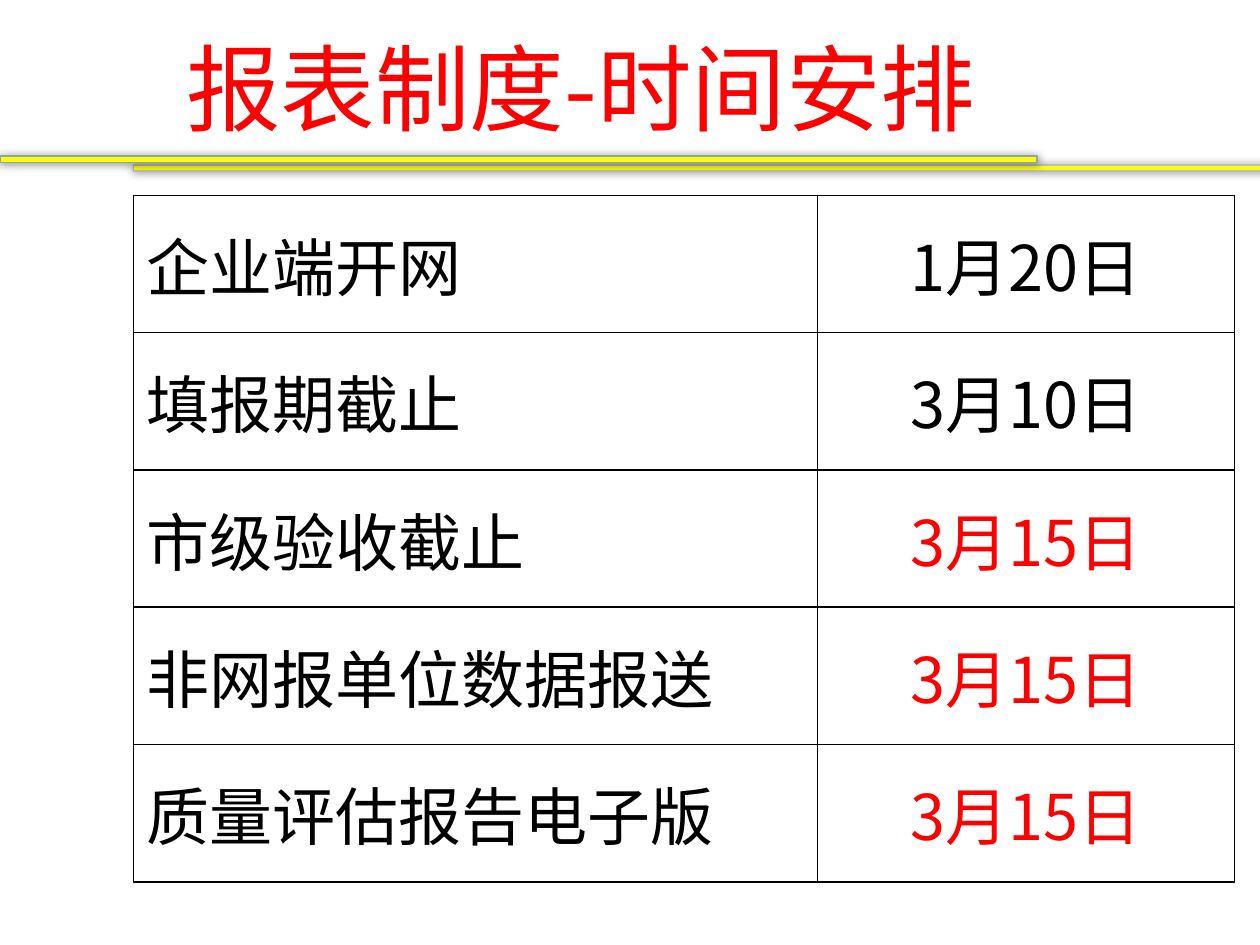
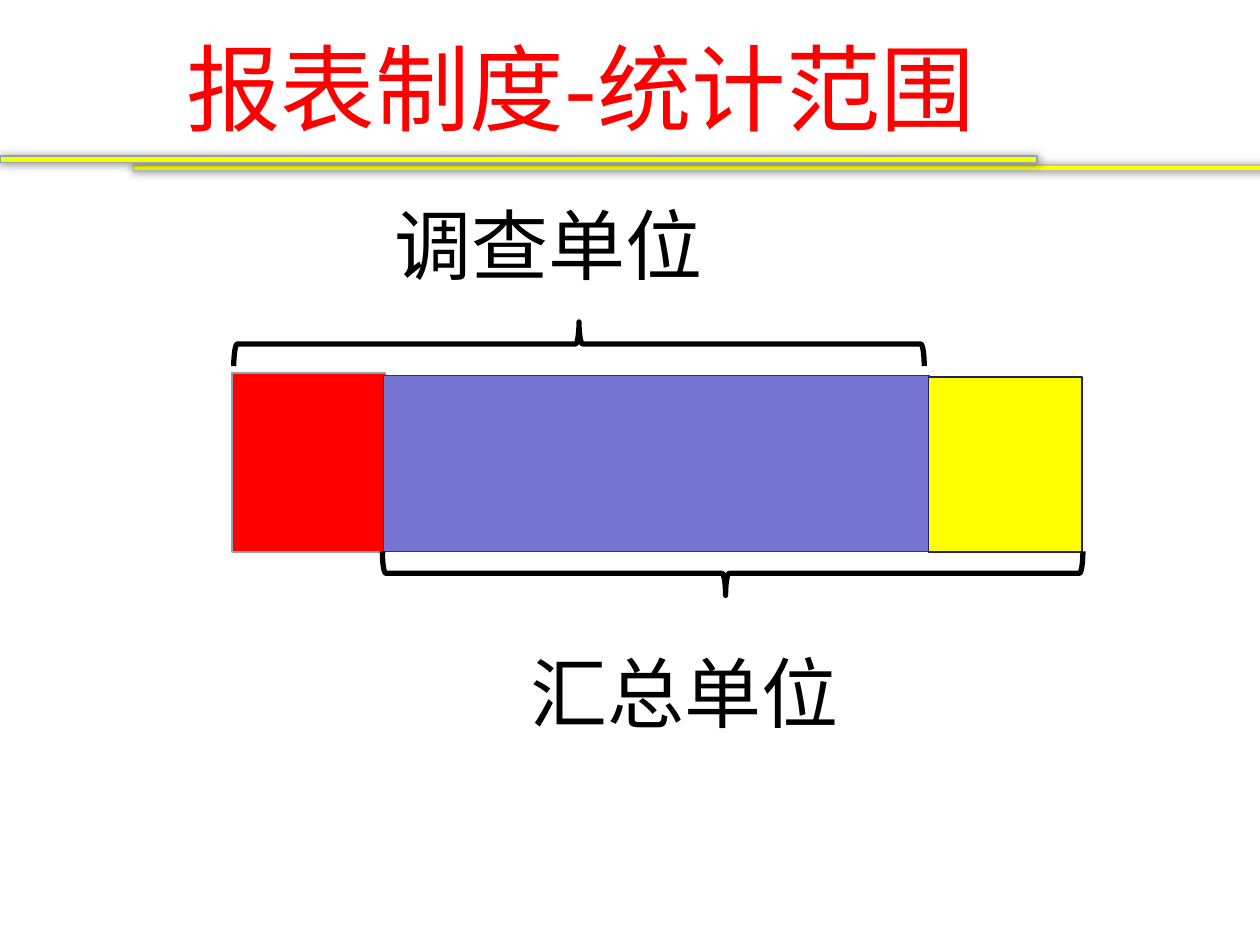
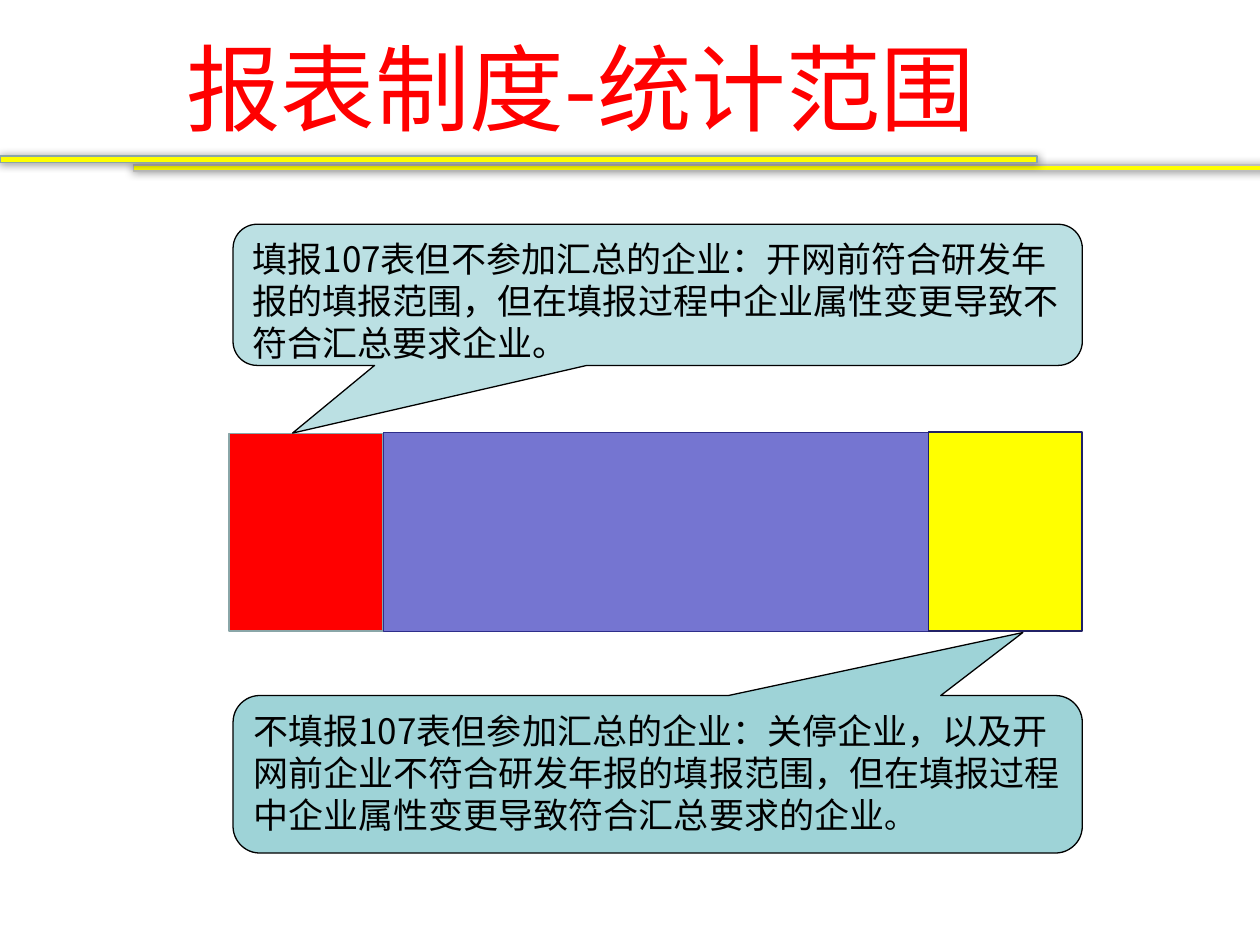
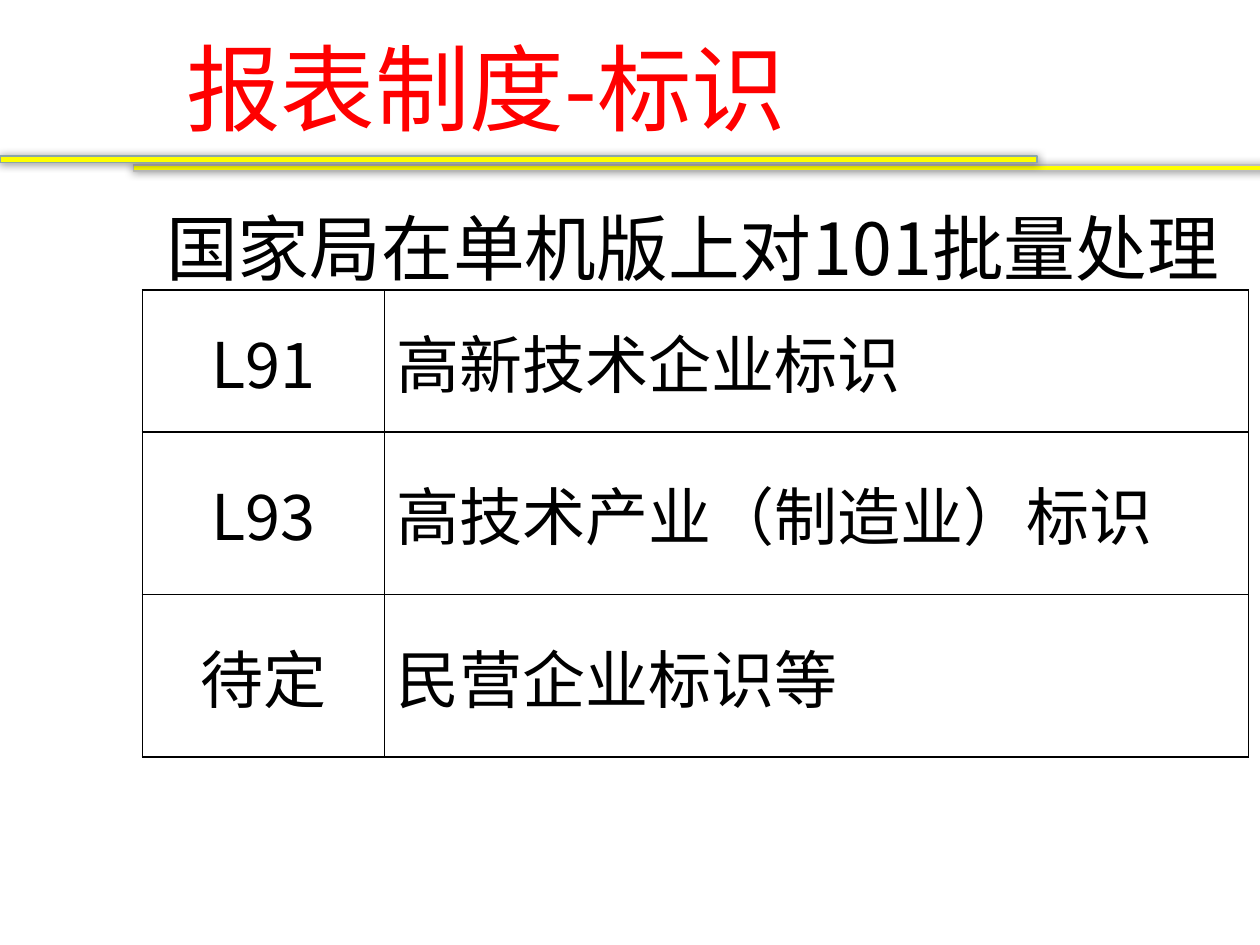
"""Build four slides on the reporting schedule, scope and labels."""
from dataclasses import dataclass
from lxml import etree
from pptx import Presentation
from pptx import util as u
from pptx.dml.color import RGBColor
from pptx.enum import shapes, text
from pptx.oxml import ns


@dataclass(frozen=True)
class Theme:
    red: str = "FF0000"
    yellow: str = "FFFF00"
    violet: str = "7575D1"
    black: str = "000000"
    white: str = "FFFFFF"
    steel: str = "8AA6A8"
    grey: str = "BDBDBD"
    navy: str = "2D2D8A"
    dark: str = "212166"
    pale: str = "BBE0E3"
    teal: str = "9ED3D7"
    sans: str = "Noto Sans CJK SC"
    body: str = "Noto Sans CJK JP"
    title: int = 54
    head: int = 44
    lead: int = 41
    cell: int = 36
    note: int = 20
    stop: int = 18


T = Theme()
KIND = shapes.MSO_SHAPE


def paint(run, size, font, color=T.black):
    run.font.size = u.Pt(size)
    run.font.name = font
    run.font.color.rgb = RGBColor.from_string(color)
    east = etree.SubElement(run._r.rPr, ns.qn("a:ea"))
    east.set("typeface", font)


def draw(slide, kind, at, fill, line, width):
    shape = slide.shapes.add_shape(kind, *map(u.Inches, at))
    shape.shadow.inherit = False
    if fill:
        shape.fill.solid()
        shape.fill.fore_color.rgb = RGBColor.from_string(fill)
    else:
        shape.fill.background()
    shape.line.color.rgb = RGBColor.from_string(line)
    shape.line.width = u.Pt(width)
    return shape


deck = Presentation()
deck.slide_width, deck.slide_height = u.Inches(10), u.Inches(7.5)

topics = ["时间安排", "统计范围", "统计范围", "标识"]
bands = [((1.06, 1.31, 9.33, 0.05), T.grey), ((0, 1.24, 8.23, 0.05), T.steel)]
for topic in topics:
    slide = deck.slides.add_slide(deck.slide_layouts[6])
    box = slide.shapes.add_textbox(*map(u.Inches, (1.38, 0.29, 8.29, 0.79)))
    frame = box.text_frame
    frame.word_wrap = True
    frame.vertical_anchor = text.MSO_ANCHOR.MIDDLE
    frame.text = "报表制度-" + topic
    paint(frame.paragraphs[0].runs[0], T.title, T.sans, T.red)
    for at, line in bands:
        band = draw(slide, KIND.RECTANGLE, at, T.yellow, line, 1)
        glow = band._element.spPr.find(ns.qn("a:effectLst"))
        shade = etree.SubElement(glow, ns.qn("a:outerShdw"), blurRad=str(u.Pt(5)), dist="0", dir="0")
        tint = etree.SubElement(shade, ns.qn("a:srgbClr"), val=T.black)
        etree.SubElement(tint, ns.qn("a:alpha"), val="40000")

plan, scope, notes, labels = deck.slides

bodies = [
    (scope, (1.38, 1.36, 8.29, 5.86), T.head, [("调查单位", 1.65, 0), ("汇总单位", 2.73, 192)]),
    (labels, (1.22, 1.36, 9.06, 5.86), T.lead, [("国家局在单机版上对101批量处理", 0, 0)]),
]
for slide, at, size, lines in bodies:
    frame = slide.shapes.add_textbox(*map(u.Inches, at)).text_frame
    frame.word_wrap = True
    frame.text = "\n".join(words for words, _, _ in lines)
    for para, (_, indent, gap) in zip(frame.paragraphs, lines):
        para._p.get_or_add_pPr().set("marL", str(u.Inches(indent)))
        para.line_spacing = u.Pt(64)
        if gap:
            para.space_before = u.Pt(gap)
        paint(para.runs[0], size, T.body)

left, mid = text.PP_ALIGN.LEFT, text.PP_ALIGN.CENTER
grids = [
    (plan, (1.06, 1.55), (5.43, 3.31), [1.09] * 5, (left, mid), None, [
        ("企业端开网", "1月20日"),
        ("填报期截止", "3月10日"),
        ("市级验收截止", "3月15日"),
        ("非网报单位数据报送", "3月15日"),
        ("质量评估报告电子版", "3月15日"),
    ]),
    (labels, (1.13, 2.3), (1.92, 6.86), [1.13, 1.29, 1.29], (mid, left), T.white, [
        ("L91", "高新技术企业标识"),
        ("L93", "高技术产业（制造业）标识"),
        ("待定", "民营企业标识等"),
    ]),
]
for slide, spot, wide, high, align, fill, rows in grids:
    size = (sum(wide), sum(high))
    grid = slide.shapes.add_table(len(rows), len(wide), *map(u.Inches, spot + size)).table
    grid.first_row = grid.horz_banding = False
    for col, width in zip(grid.columns, wide):
        col.width = u.Inches(width)
    for r, row in enumerate(rows):
        grid.rows[r].height = u.Inches(high[r])
        for c, words in enumerate(row):
            cell = grid.cell(r, c)
            cell.vertical_anchor = text.MSO_ANCHOR.MIDDLE
            cell.text_frame.text = words
            para = cell.text_frame.paragraphs[0]
            para.alignment = align[c]
            paint(para.runs[0], T.cell, T.body, T.red if words == "3月15日" else T.black)
            if fill:
                cell.fill.solid()
                cell.fill.fore_color.rgb = RGBColor.from_string(fill)
            else:
                cell.fill.background()
            props = cell._tc.get_or_add_tcPr()
            for n, side in enumerate(("lnL", "lnR", "lnT", "lnB")):
                edge = etree.Element(ns.qn("a:" + side), w=str(u.Pt(1)))
                ink = etree.SubElement(edge, ns.qn("a:solidFill"))
                etree.SubElement(ink, ns.qn("a:srgbClr"), val=T.black)
                props.insert(n, edge)

looks = [(T.red, T.steel, 1), (T.violet, T.navy, 0.5), (T.yellow, T.dark, 1)]
spans = [
    (scope, 4.38, [(1.84, 2.96, 1.22), (3.04, 2.98, 4.34), (7.37, 2.99, 1.22)]),
    (notes, 5.01, [(1.82, 3.44, 1.22), (3.04, 3.43, 4.34), (7.37, 3.43, 1.22)]),
]
for slide, base, parts in spans:
    for (x, y, width), look in zip(parts, looks):
        draw(slide, KIND.RECTANGLE, (x, y, width, base - y), *look)

braces = [((4.42, -0.01, 0.35, 5.48), 90, 0.5), ((5.64, 1.77, 0.35, 5.56), 270, 0.49)]
for at, turn, tip in braces:
    brace = draw(scope, KIND.LEFT_BRACE, at, None, T.black, 3)
    brace.rotation = turn
    brace.adjustments[0] = 0.08
    brace.adjustments[1] = tip

calls = [
    (1.78, 1.12, T.pale, (-0.43, 0.98, 0.17), [
        ("填报107表但不参加汇总的企业：开网前符合研发年报的填报范围，"
         "但在填报过程中企业属性变更导致不符合汇总要求企业。", T.note),
    ]),
    (5.52, 1.25, T.teal, (0.43, -0.9, 0.17), [
        ("不填报107表但参加汇总的企业：关停企业，以及开网前企业不符合研发年报的填报范围，"
         "但在填报过程中企业属性变更导致符合汇总要求的企业", T.note),
        ("。", T.stop),
    ]),
]
for top, high, fill, tail, runs in calls:
    call = draw(notes, KIND.ROUNDED_RECTANGULAR_CALLOUT, (1.85, top, 6.74, high), fill, T.black, 0.75)
    for n, value in enumerate(tail):
        call.adjustments[n] = value
    frame = call.text_frame
    frame.word_wrap = True
    frame.vertical_anchor = text.MSO_ANCHOR.TOP
    para = frame.paragraphs[0]
    para.alignment = left
    para.line_spacing = u.Pt(24)
    for words, size in runs:
        run = para.add_run()
        run.text = words
        paint(run, size, T.sans)

deck.save("out.pptx")
